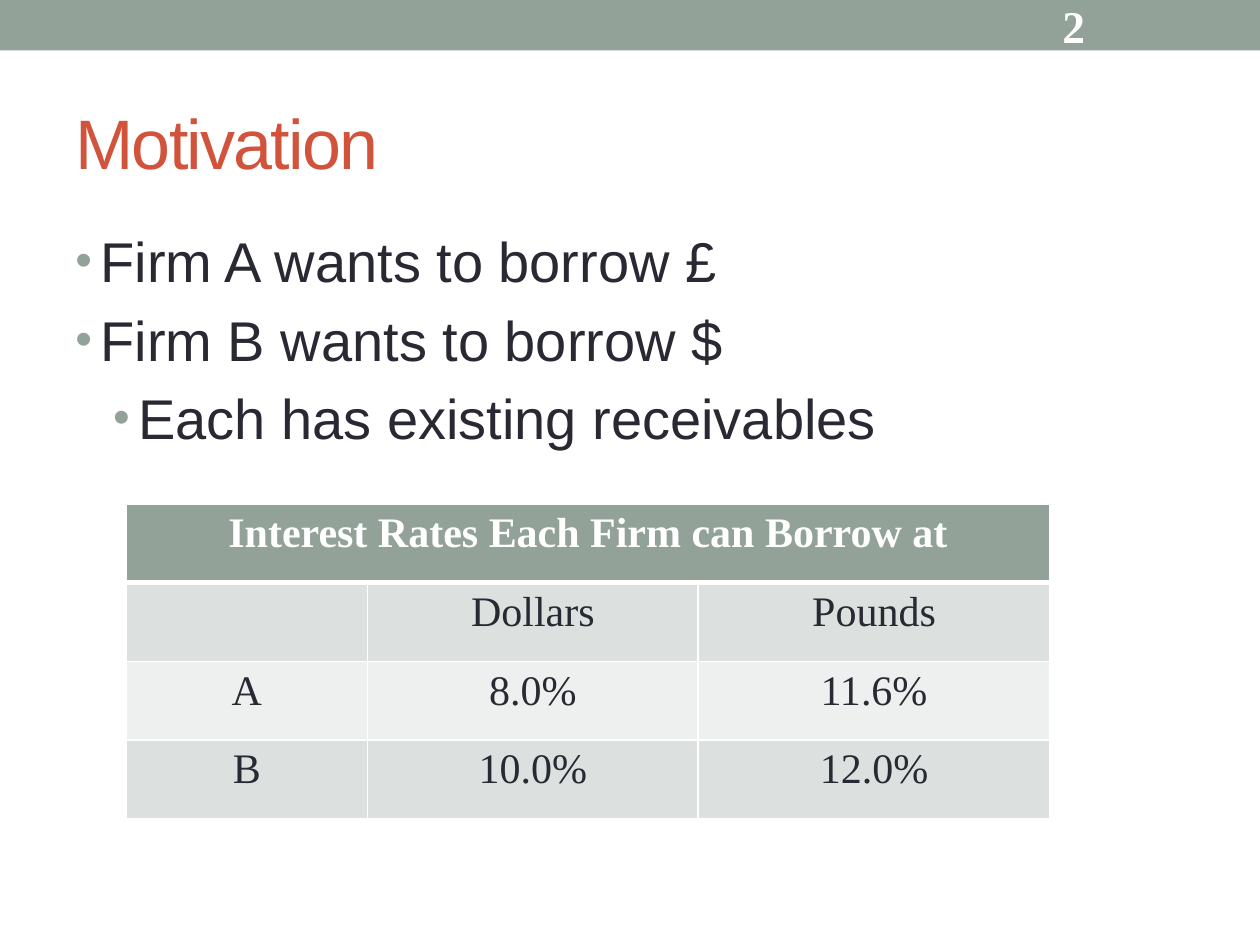
import pptx
import pptx.dml.color
import pptx.enum.shapes
import pptx.enum.text
import pptx.oxml
import pptx.oxml.ns
import pptx.util

Pt = pptx.util.Pt
ALIGN = pptx.enum.text.PP_ALIGN
ANCHOR = pptx.enum.text.MSO_ANCHOR

# Content
TITLE = "Motivation"
PAGE_NUMBER = "2"
BULLETS = [
    (0, "Firm A wants to borrow £"),
    (0, "Firm B wants to borrow $"),
    (1, "Each has existing receivables"),
]
RATES_HEADING = "Interest Rates Each Firm can Borrow at"
RATES = [
    ("", "Dollars", "Pounds"),
    ("A", "8.0%", "11.6%"),
    ("B", "10.0%", "12.0%"),
]

# Formats
SAGE, INK, RED, WHITE = "93A299", "292934", "D2533C", "FFFFFF"
BANDS = ("DCE0DE", "EEF0EF")
TITLE_FONT = {"name": "Arial", "size": Pt(40)}
BULLET_FONT = {"name": "Arial", "size": Pt(32)}
NUMBER_FONT = {"name": "Times New Roman", "size": Pt(26), "bold": True}
HEADING_FONT = {"name": "Times New Roman", "size": Pt(24), "bold": True}
CELL_FONT = {**HEADING_FONT, "bold": False}

# Layout, in points
COLUMN_WIDTHS = (138, 189, 201)
ROW_HEIGHT = 45
BULLET_INDENTS = (14.4, 36)
HANGING = 14.4


def rgb(value):
    return pptx.dml.color.RGBColor.from_string(value)


def paint(target, color):
    target.fill.solid()
    target.fill.fore_color.rgb = rgb(color)


def write(para, text, font, color):
    span = para.add_run()
    span.text = text
    for name, value in font.items():
        setattr(span.font, name, value)
    span.font.color.rgb = rgb(color)
    return span


def add_box(page, area, anchor):
    box = page.shapes.add_textbox(*map(Pt, area))
    frame = box.text_frame
    frame.word_wrap = True
    frame.vertical_anchor = anchor
    return frame


def add_xml(parent, *fragments):
    namespace = pptx.oxml.ns.nsdecls("a")
    for fragment in fragments:
        head, rest = fragment.split(" ", 1)
        parent.append(pptx.oxml.parse_xml(f"{head} {namespace} {rest}"))


def add_bullet(para, indent):
    properties = para._p.get_or_add_pPr()
    properties.set("marL", str(Pt(indent)))
    properties.set("indent", str(-Pt(HANGING)))
    add_xml(
        properties,
        '<a:spcBef ><a:spcPct val="20000"/></a:spcBef>',
        f'<a:buClr ><a:srgbClr val="{SAGE}"/></a:buClr>',
        '<a:buSzPct val="85000"/>',
        '<a:buFont typeface="Arial"/>',
        '<a:buChar char="•"/>',
    )


def add_borders(cell, top, bottom):
    widths = {"lnL": 1, "lnR": 1, "lnT": top, "lnB": bottom}
    for side, width in widths.items():
        add_xml(
            cell._tc.get_or_add_tcPr(),
            f'<a:{side} w="{Pt(width)}"><a:solidFill>'
            f'<a:srgbClr val="{WHITE}"/></a:solidFill></a:{side}>',
        )


def add_rates(page):
    rows = [(RATES_HEADING, "", "")] + RATES
    table = page.shapes.add_table(
        len(rows), len(COLUMN_WIDTHS), Pt(72), Pt(288),
        Pt(sum(COLUMN_WIDTHS)), Pt(ROW_HEIGHT * len(rows)),
    ).table
    for column, width in zip(table.columns, COLUMN_WIDTHS):
        column.width = Pt(width)
    for index, texts in enumerate(rows):
        heading = index == 0
        table.rows[index].height = Pt(ROW_HEIGHT)
        for column, text in enumerate(texts):
            cell = table.cell(index, column)
            add_borders(cell, 3 if index == 1 else 1, 3 if heading else 1)
            paint(cell, SAGE if heading else BANDS[(index - 1) % 2])
            para = cell.text_frame.paragraphs[0]
            para.alignment = ALIGN.CENTER
            if text:
                write(para, text, HEADING_FONT if heading else CELL_FONT,
                      WHITE if heading else INK)
    table.cell(0, 0).merge(table.cell(0, len(COLUMN_WIDTHS) - 1))


def main():
    deck = pptx.Presentation()
    deck.slide_width, deck.slide_height = Pt(720), Pt(540)
    page = deck.slides.add_slide(deck.slide_layouts[6])

    # Top band with page number
    band = page.shapes.add_shape(
        pptx.enum.shapes.MSO_SHAPE.RECTANGLE, 0, 0, Pt(720), Pt(28.8))
    band.shadow.inherit = False
    paint(band, SAGE)
    band.line.fill.background()
    number = add_box(page, (600, 1.5, 84, 26), ANCHOR.MIDDLE)
    write(number.paragraphs[0], PAGE_NUMBER, NUMBER_FONT, WHITE)

    # Title, with tightened letter spacing
    title = add_box(page, (36, 42, 648, 78), ANCHOR.MIDDLE)
    span = write(title.paragraphs[0], TITLE, TITLE_FONT, RED)
    span.font._element.set("spc", "-100")

    # Bullets
    body = add_box(page, (36, 126, 648, 384), ANCHOR.TOP)
    for index, (level, text) in enumerate(BULLETS):
        para = body.add_paragraph() if index else body.paragraphs[0]
        para.level = level
        add_bullet(para, BULLET_INDENTS[level])
        write(para, text, BULLET_FONT, INK)

    # Interest rate table
    add_rates(page)
    deck.save("out.pptx")


if __name__ == "__main__":
    main()
